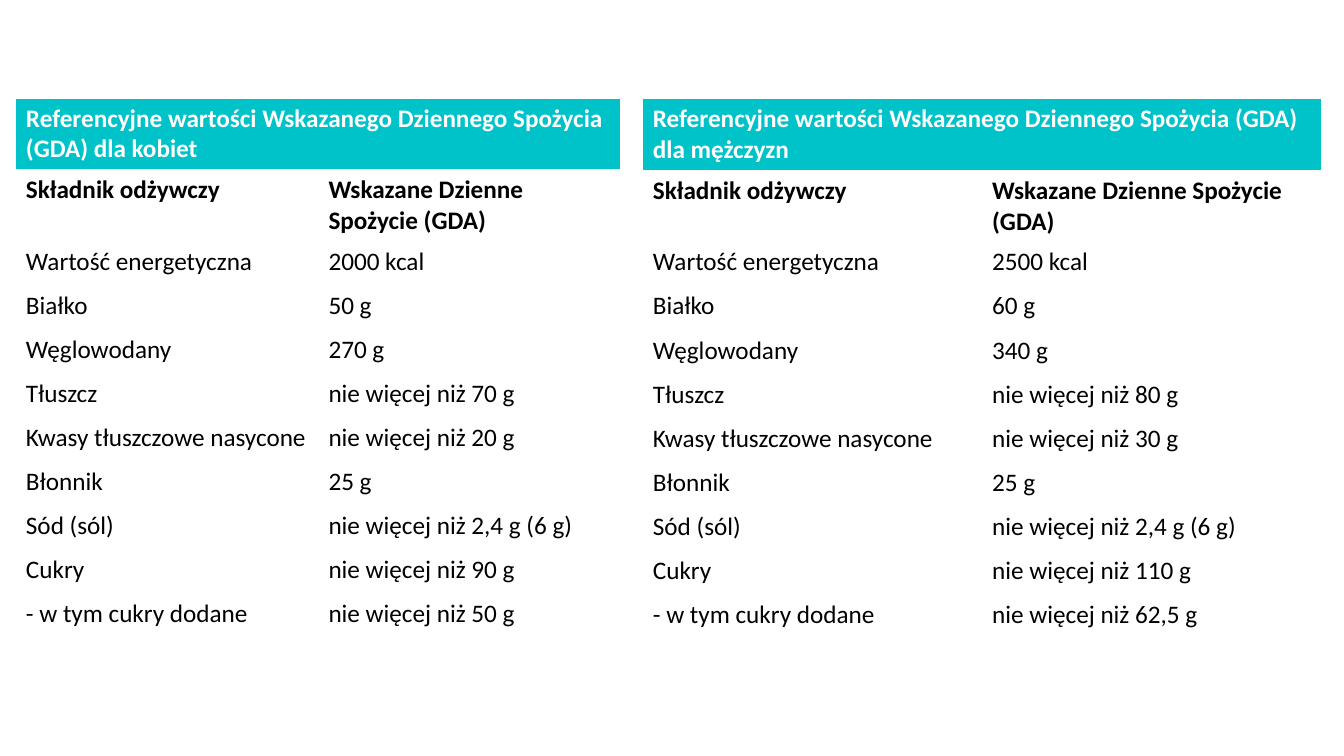
"""Build a slide with two tables of daily intake values, for women and for men."""
from pptx import Presentation
from pptx.dml.color import RGBColor
from pptx.enum import text
from pptx.util import Cm, Pt

TITLE = "Referencyjne wartości Wskazanego Dziennego Spożycia (GDA) dla "
HEADS = ("Składnik odżywczy", "Wskazane Dzienne Spożycie (GDA)")
ITEMS = [
    ("Wartość energetyczna", "2000 kcal", "2500 kcal"),
    ("Białko", "50 g", "60 g"),
    ("Węglowodany", "270 g", "340 g"),
    ("Tłuszcz", "nie więcej niż 70 g", "nie więcej niż 80 g"),
    ("Kwasy tłuszczowe nasycone", "nie więcej niż 20 g", "nie więcej niż 30 g"),
    ("Błonnik", "25 g", "25 g"),
    ("Sód (sól)", "nie więcej niż 2,4 g (6 g)", "nie więcej niż 2,4 g (6 g)"),
    ("Cukry", "nie więcej niż 90 g", "nie więcej niż 110 g"),
    ("- w tym cukry dodane", "nie więcej niż 50 g", "nie więcej niż 62,5 g"),
]
GROUPS = [
    {"who": "kobiet", "left": 0.4, "width": 15.25, "top_row": 1.78},
    {"who": "mężczyzn", "left": 16.2, "width": 17.1, "top_row": 1.82},
]
COLORS = {"teal": "00C2C9", "white": "FFFFFF", "black": "000000"}
TOP, HEAD_ROW, ITEM_ROW = 2.47, 1.78, 1.11


def color(name):
    return RGBColor.from_string(COLORS[name])


def write(cell, words, fill, ink, bold):
    cell.text_frame.text = words
    cell.fill.solid()
    cell.fill.fore_color.rgb = color(fill)
    font = cell.text_frame.paragraphs[0].runs[0].font
    font.name, font.size, font.bold = "Calibri", Pt(18), bold
    font.color.rgb = color(ink)


def add_group(slide, group, col):
    rows = [HEADS] + [(item[0], item[col]) for item in ITEMS]
    sizes = [group["top_row"], HEAD_ROW] + [ITEM_ROW] * len(ITEMS)
    table = slide.shapes.add_table(
        len(sizes), 2, Cm(group["left"]), Cm(TOP),
        Cm(group["width"]), Cm(sum(sizes))).table
    table.first_row = table.horz_banding = False
    for row, size in zip(table.rows, sizes):
        row.height = Cm(size)
    title = table.cell(0, 0)
    title.merge(table.cell(0, 1))
    write(title, TITLE + group["who"], "teal", "white", True)
    title.vertical_anchor = text.MSO_ANCHOR.MIDDLE
    for r, row in enumerate(rows, 1):
        for c, words in enumerate(row):
            write(table.cell(r, c), words, "white", "black", r == 1)


def main():
    deck = Presentation()
    deck.slide_width, deck.slide_height = Cm(33.87), Cm(19.05)
    slide = deck.slides.add_slide(deck.slide_layouts[6])
    for col, group in enumerate(GROUPS, 1):
        add_group(slide, group, col)
    deck.save("out.pptx")


if __name__ == "__main__":
    main()
